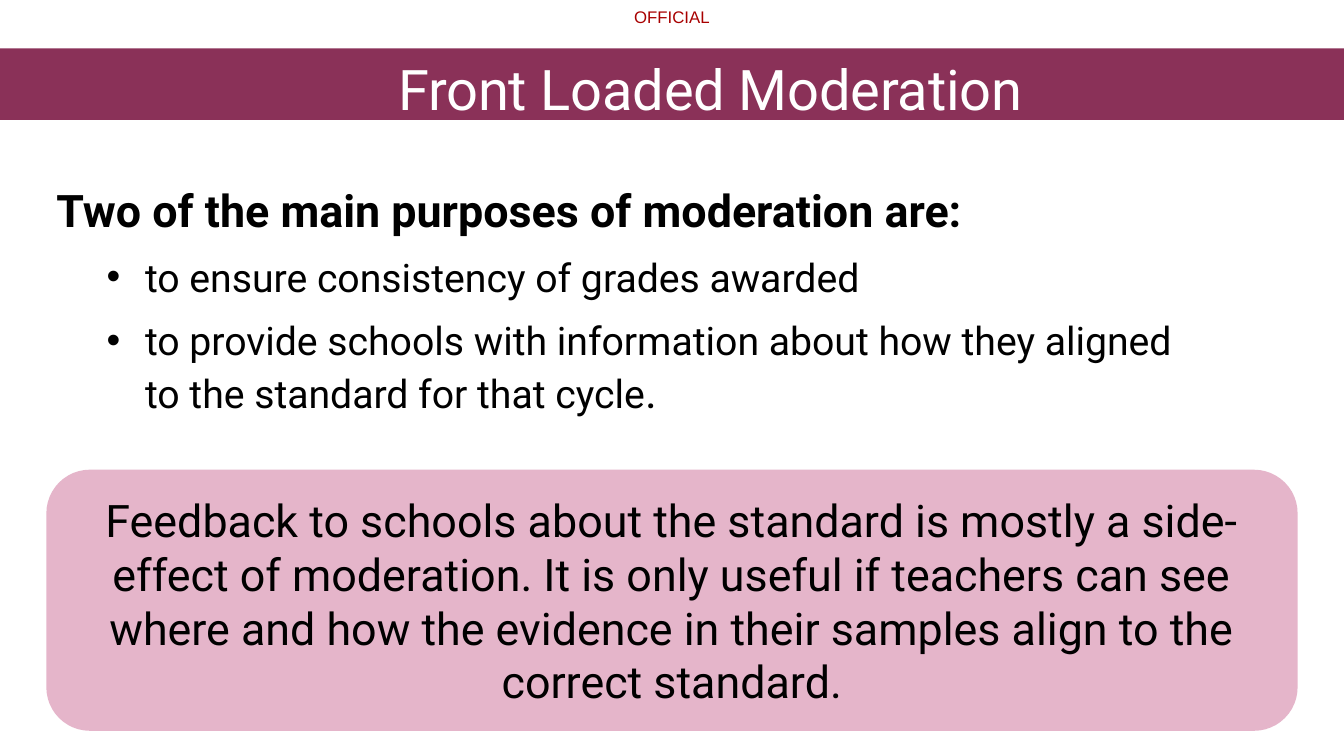
from dataclasses import dataclass

from lxml.etree import SubElement
from pptx import Presentation
from pptx.dml.color import RGBColor
from pptx.enum.shapes import MSO_SHAPE
from pptx.enum.text import MSO_ANCHOR, PP_ALIGN
from pptx.oxml.ns import qn
from pptx.util import Inches, Pt


@dataclass(frozen=True)
class Theme:
    body_font: str = "Roboto"
    marking_font: str = "Arial"
    marking: str = "A80000"
    banner: str = "8A3158"
    callout: str = "E5B5CA"
    light: str = "FFFFFF"
    dark: str = "000000"
    marking_size: int = 12
    title_size: int = 40
    heading_size: int = 32
    bullet_size: int = 28


THEME = Theme()


def add_run(paragraph, text, size, color=THEME.dark, font=THEME.body_font, bold=False):
    run = paragraph.add_run()
    run.text = text
    run.font.size = Pt(size)
    run.font.name = font
    run.font.bold = bold
    run.font.color.rgb = RGBColor.from_string(color)
    return run


def set_insets(frame, top=0):
    frame.margin_left = frame.margin_right = frame.margin_bottom = 0
    frame.margin_top = Inches(top)


def set_indent(paragraph, left, first=0):
    properties = paragraph._p.get_or_add_pPr()
    properties.set("marL", str(Inches(left)))
    properties.set("indent", str(Inches(first)))
    return properties


def add_text_box(slide, box):
    frame = slide.shapes.add_textbox(*map(Inches, box)).text_frame
    frame.word_wrap = True
    return frame


def add_panel(slide, box, preset, color):
    shape = slide.shapes.add_shape(preset, *map(Inches, box))
    shape.shadow.inherit = False
    shape.fill.solid()
    shape.fill.fore_color.rgb = RGBColor.from_string(color)
    shape.line.fill.background()
    frame = shape.text_frame
    frame.word_wrap = True
    frame.paragraphs[0].alignment = PP_ALIGN.CENTER
    return frame


def add_marking(slide, box, text):
    frame = add_text_box(slide, box)
    set_insets(frame)
    add_run(frame.paragraphs[0], text, THEME.marking_size, THEME.marking, THEME.marking_font)


def add_banner(slide, box, title):
    frame = add_panel(slide, box, MSO_SHAPE.RECTANGLE, THEME.banner)
    frame.vertical_anchor = MSO_ANCHOR.TOP
    set_insets(frame, top=0.06)
    paragraph = frame.paragraphs[0]
    set_indent(paragraph, 0.76)
    run = add_run(paragraph, title, THEME.title_size, THEME.light)
    run._r.get_or_add_rPr().set("spc", "-10")


def add_bullet(frame, lines, ending=""):
    paragraph = frame.add_paragraph()
    paragraph.level = 1
    paragraph.space_after = Pt(12)
    properties = set_indent(paragraph, 0.88, -0.38)
    SubElement(properties, qn("a:buFont"), typeface=THEME.marking_font)
    SubElement(properties, qn("a:buChar"), char="•")
    for index, line in enumerate(lines):
        if index:
            paragraph.add_line_break()
        add_run(paragraph, line, THEME.bullet_size)
    if ending:
        add_run(paragraph, ending, THEME.heading_size)


def add_purposes(slide, box):
    frame = add_text_box(slide, box)
    heading = frame.paragraphs[0]
    heading.space_after = Pt(12)
    add_run(heading, "Two of the main purposes of moderation are:", THEME.heading_size, bold=True)
    add_bullet(frame, ["to ensure consistency of grades awarded"])
    add_bullet(
        frame,
        [
            "to provide schools with information about how they aligned ",
            "to the standard for that cycle",
        ],
        ending=".",
    )


def add_callout(slide, box, text):
    frame = add_panel(slide, box, MSO_SHAPE.ROUNDED_RECTANGLE, THEME.callout)
    frame.vertical_anchor = MSO_ANCHOR.MIDDLE
    add_run(frame.paragraphs[0], text, THEME.heading_size)


def main():
    presentation = Presentation()
    presentation.slide_width = Inches(13.33)
    presentation.slide_height = Inches(7.5)
    slide = presentation.slides.add_slide(presentation.slide_layouts[6])
    add_marking(slide, (6.29, 0.07, 0.8, 0.2), "OFFICIAL")
    add_banner(slide, (0, 0.48, 13.33, 0.71), "Front Loaded Moderation")
    add_purposes(slide, (0.46, 1.76, 12.41, 2.46))
    add_callout(
        slide,
        (0.46, 4.66, 12.41, 2.59),
        "Feedback to schools about the standard is mostly a side-effect of moderation. "
        "It is only useful if teachers can see where and how the evidence in their "
        "samples align to the correct standard.",
    )
    presentation.save("out.pptx")


if __name__ == "__main__":
    main()
